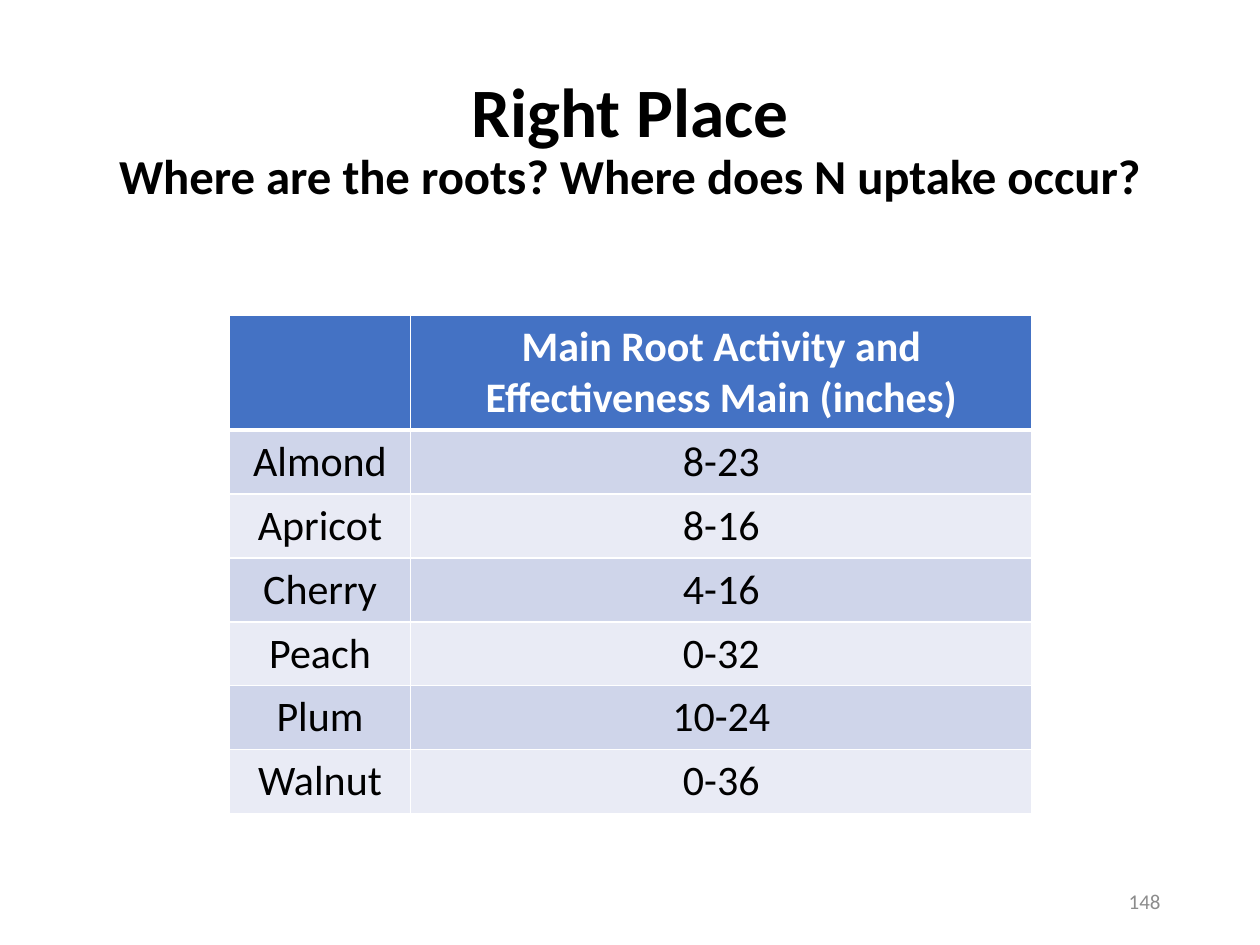
from dataclasses import dataclass

from lxml import etree
from pptx import Presentation
from pptx import util as u
from pptx.dml.color import RGBColor
from pptx.enum import text
from pptx.oxml import ns


@dataclass(frozen=True)
class Theme:
    font: str = "Calibri"
    ink: str = "000000"
    white: str = "FFFFFF"
    header: str = "4472C4"
    bands: tuple = ("CFD5EA", "E9EBF5")
    muted: str = "8C8C8C"
    title_size: float = 39.6
    subtitle_size: float = 27.9
    table_size: float = 24
    number_size: float = 12
    border: float = 1
    header_border: float = 3


class SlideBuilder:
    """Adds styled elements to the current slide."""

    def __init__(self, slide, theme):
        self.slide = slide
        self.theme = theme

    def run(self, paragraph, content, size, color, bold=False):
        run = paragraph.add_run()
        run.text = content
        run.font.name = self.theme.font
        run.font.size = u.Pt(size)
        run.font.bold = bold
        run.font.color.rgb = RGBColor.from_string(color)

    def title(self, heading, question, left, top, width, height):
        theme = self.theme
        shape = self.slide.shapes.title
        shape.left, shape.top = u.Inches(left), u.Inches(top)
        shape.width, shape.height = u.Inches(width), u.Inches(height)
        frame = shape.text_frame
        frame.word_wrap = True
        frame.auto_size = text.MSO_AUTO_SIZE.NONE
        frame.vertical_anchor = text.MSO_ANCHOR.MIDDLE
        paragraph = frame.paragraphs[0]
        paragraph.alignment = text.PP_ALIGN.CENTER
        paragraph.line_spacing = 0.9
        self.run(paragraph, heading, theme.title_size, theme.ink, True)
        paragraph.add_line_break()
        self.run(paragraph, question, theme.subtitle_size, theme.ink, True)

    def borders(self, cell, top, bottom):
        thin = self.theme.border
        properties = cell._tc.get_or_add_tcPr()
        for side, points in (("L", thin), ("R", thin), ("T", top), ("B", bottom)):
            line = etree.SubElement(properties, ns.qn(f"a:ln{side}"), w=str(u.Pt(points)))
            fill = etree.SubElement(line, ns.qn("a:solidFill"))
            etree.SubElement(fill, ns.qn("a:srgbClr"), val=self.theme.white)

    def cell(self, cell, content, row):
        theme = self.theme
        is_header = row == 0
        top = theme.header_border if row == 1 else theme.border
        bottom = theme.header_border if is_header else theme.border
        self.borders(cell, top, bottom)
        cell.fill.solid()
        fill = theme.header if is_header else theme.bands[(row - 1) % 2]
        cell.fill.fore_color.rgb = RGBColor.from_string(fill)
        cell.vertical_anchor = text.MSO_ANCHOR.MIDDLE
        paragraph = cell.text_frame.paragraphs[0]
        paragraph.alignment = text.PP_ALIGN.CENTER
        if content:
            color = theme.white if is_header else theme.ink
            self.run(paragraph, content, theme.table_size, color, is_header)

    def table(self, rows, left, top, widths, header_height, row_height):
        heights = [header_height] + [row_height] * (len(rows) - 1)
        table = self.slide.shapes.add_table(
            len(rows), len(widths), u.Inches(left), u.Inches(top),
            u.Inches(sum(widths)), u.Inches(sum(heights))).table
        for column, width in zip(table.columns, widths):
            column.width = u.Inches(width)
        for index, (values, height) in enumerate(zip(rows, heights)):
            table.rows[index].height = u.Inches(height)
            for cell, content in zip(table.rows[index].cells, values):
                self.cell(cell, content, index)

    def page_number(self, number, left, top, width, height):
        shape = self.slide.shapes.add_textbox(
            u.Inches(left), u.Inches(top), u.Inches(width), u.Inches(height))
        frame = shape.text_frame
        frame.word_wrap = True
        frame.vertical_anchor = text.MSO_ANCHOR.MIDDLE
        paragraph = frame.paragraphs[0]
        paragraph.alignment = text.PP_ALIGN.RIGHT
        self.run(paragraph, number, self.theme.number_size, self.theme.muted)


def main():
    presentation = Presentation()
    presentation.slide_width = u.Inches(10)
    presentation.slide_height = u.Inches(7.5)
    slide = presentation.slides.add_slide(presentation.slide_layouts[5])
    builder = SlideBuilder(slide, Theme())
    root_depths = [
        ("", "Main Root Activity and Effectiveness Main (inches)"),
        ("Almond", "8-23"),
        ("Apricot", "8-16"),
        ("Cherry", "4-16"),
        ("Peach", "0-32"),
        ("Plum", "10-24"),
        ("Walnut", "0-36"),
    ]
    builder.table(root_depths, 1.82, 2.5, (1.44, 4.93), 0.9, 0.5)
    builder.title("Right Place", "Where are the roots? Where does N uptake occur?",
                  0.69, 0.4, 8.62, 1.45)
    builder.page_number("148", 7.06, 6.95, 2.25, 0.4)
    presentation.save("out.pptx")


if __name__ == "__main__":
    main()
